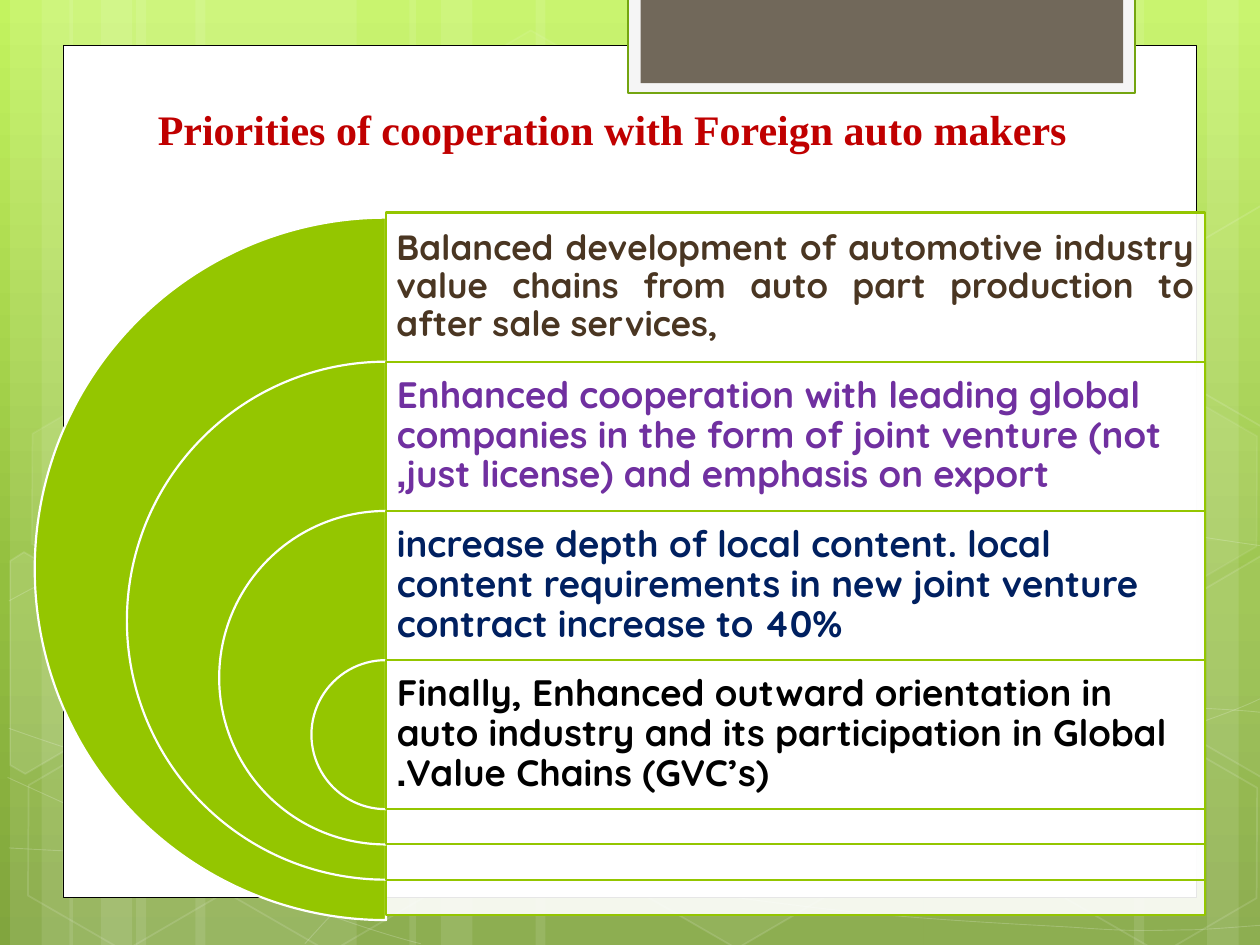
from copy import deepcopy
from math import cos, radians, sin

from lxml.etree import SubElement as Sub
from pptx import Presentation as Deck
from pptx.dml.color import RGBColor as Rgb
from pptx.enum.shapes import MSO_SHAPE as Kind
from pptx.enum.text import MSO_ANCHOR as Anchor, PP_ALIGN as Align
from pptx.oxml.ns import qn
from pptx.util import Inches, Pt

COLS = 100
WHITE, GREEN = "FFFFFF", "94C600"

BARS = [(10.8, 17.5, 0), (0.8, 5, 0), (3.3, 8.3, 0), (15.5, 17.5, 0), (5.5, 5, 0), (8, 8.3, 0),
        (73.3, 17.5, 180), (95.8, 5, 180), (90, 8.3, 180),
        (42.5, 30.8, 0), (32.5, 5, 0), (35, 8.3, 0)]

WAVES = [
    [(0.7, 67.3), (6.1, 67.6), (11.5, 67.9), (19, 67.8), (26.5, 67.7), (35.8, 67.5), (45.8, 66.5),
     (55.8, 65.5), (70, 63.6), (79.2, 61.7), (88.3, 59.8), (97.7, 56.8), (100.7, 55.1)],
    [(0.7, 47.7), (3.6, 46.1), (6.5, 44.6), (12.1, 43.1), (17.8, 41.6), (25.9, 39.4), (34.7, 38.7),
     (43.6, 38), (54.4, 37.9), (65.4, 38.7), (76.4, 39.5), (94.7, 42.6), (100.7, 43.4)],
    [(0.6, 61.7), (12.7, 67.2), (24.7, 72.7), (33.4, 74.9)],
    [(0.7, 57.8), (3.8, 58.9), (7, 60), (12.8, 61.6), (18.6, 63.1), (27.3, 65.6), (35.7, 67.3),
     (44, 69), (54.5, 70.8), (62.8, 71.8), (71.1, 72.9), (80, 73.3), (85.3, 73.6),
     (90.5, 74), (91.9, 73.8), (94.5, 73.8), (97.1, 73.7), (98.9, 73.5), (100.7, 73.4)],
    [(24.2, 74.9), (26, 72.9), (27.8, 70.9), (30.2, 69.1), (32.6, 67.3), (36, 65.3), (38.8, 63.9),
     (41.6, 62.5), (43.3, 61.9), (47, 60.9), (50.6, 59.9), (57.3, 58.5), (60.8, 57.8),
     (64.4, 57.1), (64.9, 57.1), (68, 56.9), (71.1, 56.6), (76, 56.3), (79.4, 56.2),
     (82.9, 56.1), (88.6, 56.2), (88.6, 56.2), (90.8, 56.2), (93.1, 56.2), (95.3, 56.2),
     (97.1, 56.3), (98.8, 56.4), (99.7, 56.5), (100.6, 56.6), (100.3, 56.5), (100.6, 56.6)],
]

CELLS = [(33.4, 3.6, 4, 8), (49.7, 58.9, 6, 12), (1.1, 59.1, 0, 12), (1.4, 31.2, 7, 8),
         (17.4, 59.2, 0, 12), (75.3, 45.3, 10, 12), (83.4, 59.3, 0, 12), (83.4, 31.4, 7, 8)]

SHARDS = [
    ((3.6, 53.5), 10, [(0.8, 44.5), (1.9, 43.8), (9.6, 48.2), (9.5, 57), (2, 61.4), (0.8, 60.7)]),
    ((98.5, 52), 4, [(92.6, 48.5), (100.1, 44.1), (100.9, 44.6), (100.9, 61.3), (100.2, 61.7),
                     (92.6, 57.3)]),
    ((98.5, 24.1), 0, [(92.6, 20.7), (100.1, 16.3), (101, 16.8), (100.9, 33.5), (100.2, 33.9),
                       (92.6, 29.5)]),
]

GOALS = [
    ("Balanced development of automotive industry value chains from auto part production to "
     "after sale services,", "4A3622", 20, Align.JUSTIFY, False),
    ("Enhanced cooperation with leading global companies in the form of joint venture (not just "
     "license) and emphasis on export,", "7030A0", 21, Align.LEFT, True),
    ("increase depth of local content. local content requirements in new joint venture contract "
     "increase to 40%", "002060", 21, Align.LEFT, True),
    ("Finally, Enhanced outward orientation in auto industry and its participation in Global "
     "Value Chains (GVC’s).", "000000", 21, Align.LEFT, True),
]


def paint(color, tone):
    color.rgb = Rgb.from_string(tone)


def fade(fill, tone, share=100):
    fill.solid()
    paint(fill.fore_color, tone)
    if share < 100:
        node = fill._xPr.find(qn("a:solidFill"))[0]
        Sub(node, qn("a:alpha")).set("val", str(share * 1000))


def write(frame, text, font="Quicksand", size=21, tone="000000", align=Align.LEFT,
          anchor=Anchor.MIDDLE, rtl=False, lead=None, pad=(0.1, 0.05, 0.1, 0.05)):
    frame.word_wrap = True
    frame.vertical_anchor = anchor
    (frame.margin_left, frame.margin_top,
     frame.margin_right, frame.margin_bottom) = map(Inches, pad)
    para = frame.paragraphs[0]
    para.alignment = align
    para.line_spacing = lead
    if rtl:
        para._p.get_or_add_pPr().set("rtl", "1")
    run = para.add_run()
    run.text = text
    run.font.name, run.font.size, run.font.bold = font, Pt(size), True
    paint(run.font.color, tone)


def bend(shape):
    track = shape.element.find(".//" + qn("a:path"))
    lines = track.findall(qn("a:lnTo"))
    for k in range(0, len(lines), 3):
        curve = Sub(track, qn("a:cubicBezTo"))
        for line in lines[k:k + 3]:
            curve.append(line[0])
            track.remove(line)


def turn(points, mid, angle):
    c, s = cos(radians(angle)), sin(radians(angle))
    x, y = mid
    return [(x + (p - x) * c - (q - y) * s, y + (p - x) * s + (q - y) * c) for p, q in points]


class Page:
    def __init__(self, deck):
        self.slide = deck.slides.add_slide(deck.slide_layouts[5])
        self.shapes = self.slide.shapes
        self.unit = deck.slide_width / COLS

    def grid(self, *cells):
        return [round(c * self.unit) for c in cells]

    def group(self):
        group = self.slide.shapes.add_group_shape()
        self.shapes = group.shapes
        return group

    def sink(self, *items):
        tree = self.slide.slide_layout.shapes.element
        for k, item in enumerate(items):
            tree.insert(2 + k, item.element)
        self.shapes = self.slide.shapes

    def ground(self, stops):
        fill = self.slide.background.fill
        fill.gradient()
        fill.gradient_angle = 270
        nodes = self.slide.element.find(".//" + qn("a:gsLst"))
        nodes.append(deepcopy(nodes[-1]))
        for stop, (place, tone) in zip(fill.gradient_stops, stops):
            stop.position = place
            paint(stop.color, tone)

    def dress(self, shape, fill=None, line=None, width=1, clear=100, dim=100):
        shape.shadow.inherit = False
        if fill:
            fade(shape.fill, fill, clear)
        else:
            shape.fill.background()
        if line:
            fade(shape.line.fill, line, dim)
            shape.line.width = Pt(width)
        else:
            shape.line.fill.background()
        return shape

    def form(self, kind, box, adjust=(), spin=0, **style):
        shape = self.shapes.add_shape(kind, *self.grid(*box))
        for k, value in enumerate(adjust):
            shape.adjustments[k] = value
        shape.rotation = spin
        return self.dress(shape, **style)

    def trace(self, points, close=False, spin=0, **style):
        pen = self.shapes.build_freeform(*self.grid(*points[0]))
        pen.add_line_segments([self.grid(*p) for p in points[1:]], close=close)
        shape = pen.convert_to_shape()
        shape.rotation = spin
        return self.dress(shape, **style)

    def label(self, box, text, **style):
        write(self.shapes.add_textbox(*self.grid(*box)).text_frame, text, **style)

    def title(self, box, text, **style):
        head = self.slide.shapes.title
        head.left, head.top, head.width, head.height = self.grid(*box)
        write(head.text_frame, text, **style)


def scene(page):
    page.ground([(0, "C3F35F"), (0.62, "93BF3F"), (1, "81A53E")])
    decor = page.group()
    for left, width, spin in BARS:
        page.form(Kind.RECTANGLE, (left, 0, width, 75), spin=spin, fill=WHITE, clear=10)
    for wave in WAVES:
        bend(page.trace(wave, line=WHITE, width=0.5, dim=20))
    for left, top, clear, dim in CELLS:
        page.form(Kind.HEXAGON, (left, top, 17.5, 15.2), (0.285, 1.155), 30,
                  fill=WHITE if clear else None, clear=clear, line=WHITE, dim=dim)
    for mid, clear, points in SHARDS:
        page.trace(turn(points, mid, -30), True, 30,
                   fill=WHITE if clear else None, clear=clear, line=WHITE, dim=12)
    page.shapes = page.slide.shapes
    sheet = page.form(Kind.RECTANGLE, (5, 3.6, 90, 67.6), fill=WHITE, line="000000", width=0.5)
    frame = page.form(Kind.RECTANGLE, (49.85, -0.2, 40.2, 7.6),
                      fill="F5F5F5", line="74A510", width=1.25)
    tab = page.form(Kind.RECTANGLE, (50.85, -0.2, 38.3, 6.8), fill="71685A")
    page.sink(decor, sheet, frame, tab)


def stack(page):
    left, top, width, row, drop = 30.63, 16.87, 65, 11.84, 14.64
    page.group()
    for k, (text, tone, size, align, rtl) in enumerate(GOALS):
        y, high = top + k * row, 55.75 - k * drop
        lag = 0 if k else 0.4
        page.form(Kind.PIE, (left - high / 2, y + lag, high, high), (54, 162),
                  fill=GREEN, line=WHITE, width=1.25)
        page.form(Kind.RECTANGLE, (left, y, width, high),
                  fill=WHITE, clear=90, line=GREEN, width=1.25)
        page.label((left, y, width, row), text, tone=tone, size=size, align=align, rtl=rtl,
                   lead=0.9, pad=[size / 240] * 4)


def main():
    deck = Deck()
    deck.slide_width, deck.slide_height = Inches(10), Inches(7.5)
    page = Page(deck)
    scene(page)
    page.title((10.6, 7.6, 76.8, 5.1), "Priorities of cooperation with Foreign auto makers",
               font="Times New Roman", size=24, tone="C00000", align=Align.CENTER,
               anchor=Anchor.BOTTOM, rtl=True, pad=(0.1, 0.05, 0.18, 0.05))
    stack(page)
    deck.save("out.pptx")


if __name__ == "__main__":
    main()
